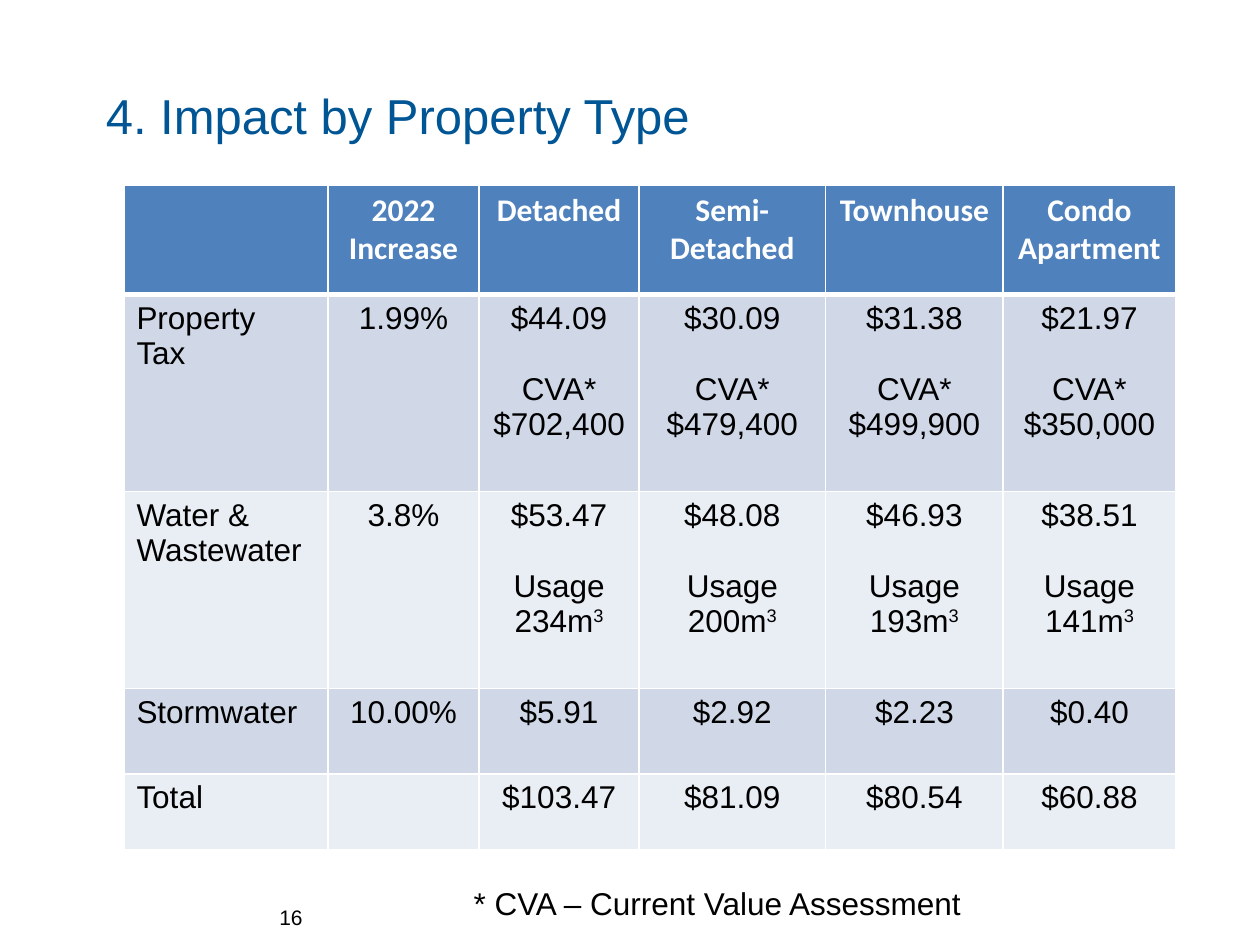
from dataclasses import dataclass

from lxml.etree import SubElement
from pptx import Presentation
from pptx.dml.color import RGBColor as Color
from pptx.enum.text import MSO_ANCHOR as Anchor, PP_ALIGN as Align
from pptx.oxml.ns import qn
from pptx.util import Pt


@dataclass
class Theme:
    title = "005595"
    text = "000000"
    white = "FFFFFF"
    header = "4F81BD"
    bands = ("D0D8E8", "E9EDF4")
    font = "Arial"
    header_font = "Calibri"
    title_size = 28
    body_size = 18
    number_size = 12
    line_gap = 20.25


theme = Theme()


def add_run(paragraph, text, size, color=theme.text, font=theme.font, bold=False):
    run = paragraph.add_run()
    run.text = text
    run.font.size = Pt(size)
    run.font.name = font
    run.font.bold = bold
    run.font.color.rgb = Color.from_string(color)
    return run


def add_border(cell, side, width):
    properties = cell._tc.get_or_add_tcPr()
    line = SubElement(properties, qn(f"a:{side}"), w=str(Pt(width)))
    fill = SubElement(line, qn("a:solidFill"))
    SubElement(fill, qn("a:srgbClr"), val=theme.white)


presentation = Presentation()
presentation.slide_width = Pt(720)
presentation.slide_height = Pt(540)
slide = presentation.slides.add_slide(presentation.slide_layouts[5])

title = slide.shapes.title
title.left, title.top, title.width, title.height = Pt(53.3), Pt(20.9), Pt(648), Pt(90)
title.text_frame.vertical_anchor = Anchor.MIDDLE
paragraph = title.text_frame.paragraphs[0]
paragraph.alignment = Align.LEFT
add_run(paragraph, "4. Impact by Property Type", theme.title_size, theme.title)

header = ["", "2022\nIncrease", "Detached", "Semi-\nDetached", "Townhouse", "Condo\nApartment"]
taxes = [("$44.09", "$702,400"), ("$30.09", "$479,400"), ("$31.38", "$499,900"), ("$21.97", "$350,000")]
water = [("$53.47", "234"), ("$48.08", "200"), ("$46.93", "193"), ("$38.51", "141")]
rows = [
    header,
    ["Property\nTax", "1.99%"] + [f"{cost}\nCVA*\n{value}" for cost, value in taxes],
    ["Water & Wastewater", "3.8%"] + [f"{cost}\nUsage\n{volume}m^3" for cost, volume in water],
    ["Stormwater", "10.00%", "$5.91", "$2.92", "$2.23", "$0.40"],
    ["Total", "", "$103.47", "$81.09", "$80.54", "$60.88"],
]
column_widths = [116.6, 86.4, 91.4, 106.6, 101.5, 98.6]
row_heights = [62.6, 112.5, 112.5, 49, 43.2]

frame = slide.shapes.add_table(
    len(rows), len(header), Pt(70.8), Pt(105.8), Pt(sum(column_widths)), Pt(sum(row_heights)))
table = frame.table
table.horz_banding = False
for column, width in zip(table.columns, column_widths):
    column.width = Pt(width)
for row, height in zip(table.rows, row_heights):
    row.height = Pt(height)

for row_index, row in enumerate(rows):
    is_header = row_index == 0
    fill = theme.header if is_header else theme.bands[(row_index - 1) % 2]
    color = theme.white if is_header else theme.text
    font = theme.header_font if is_header else theme.font
    for column_index, text in enumerate(row):
        cell = table.cell(row_index, column_index)
        for side in ("lnL", "lnR", "lnT", "lnB"):
            heavy = (is_header and side == "lnB") or (row_index == 1 and side == "lnT")
            add_border(cell, side, 3 if heavy else 1)
        cell.fill.solid()
        cell.fill.fore_color.rgb = Color.from_string(fill)
        lines = text.split("\n")
        for line_index, line in enumerate(lines):
            text_frame = cell.text_frame
            paragraph = text_frame.add_paragraph() if line_index else text_frame.paragraphs[0]
            paragraph.alignment = Align.CENTER if column_index else Align.LEFT
            paragraph.font.size = Pt(theme.body_size)
            if len(lines) == 3 and line_index == 1:
                paragraph.space_before = Pt(theme.line_gap)
            base, _, exponent = line.partition("^")
            if base:
                add_run(paragraph, base, theme.body_size, color, font, is_header)
            if exponent:
                run = add_run(paragraph, exponent, theme.body_size, color, font)
                run._r.get_or_add_rPr().set("baseline", "30000")

captions = [
    ("16", 77.8, 509.8, 102.2, theme.number_size, Align.RIGHT, Anchor.MIDDLE),
    ("* CVA – Current Value Assessment", 263.5, 501.8, 323.3, theme.body_size, Align.LEFT, Anchor.TOP),
]
for text, left, top, width, size, alignment, anchor in captions:
    text_box = slide.shapes.add_textbox(Pt(left), Pt(top), Pt(width), Pt(29))
    text_box.text_frame.word_wrap = True
    text_box.text_frame.vertical_anchor = anchor
    paragraph = text_box.text_frame.paragraphs[0]
    paragraph.alignment = alignment
    add_run(paragraph, text, size)

presentation.save("out.pptx")
